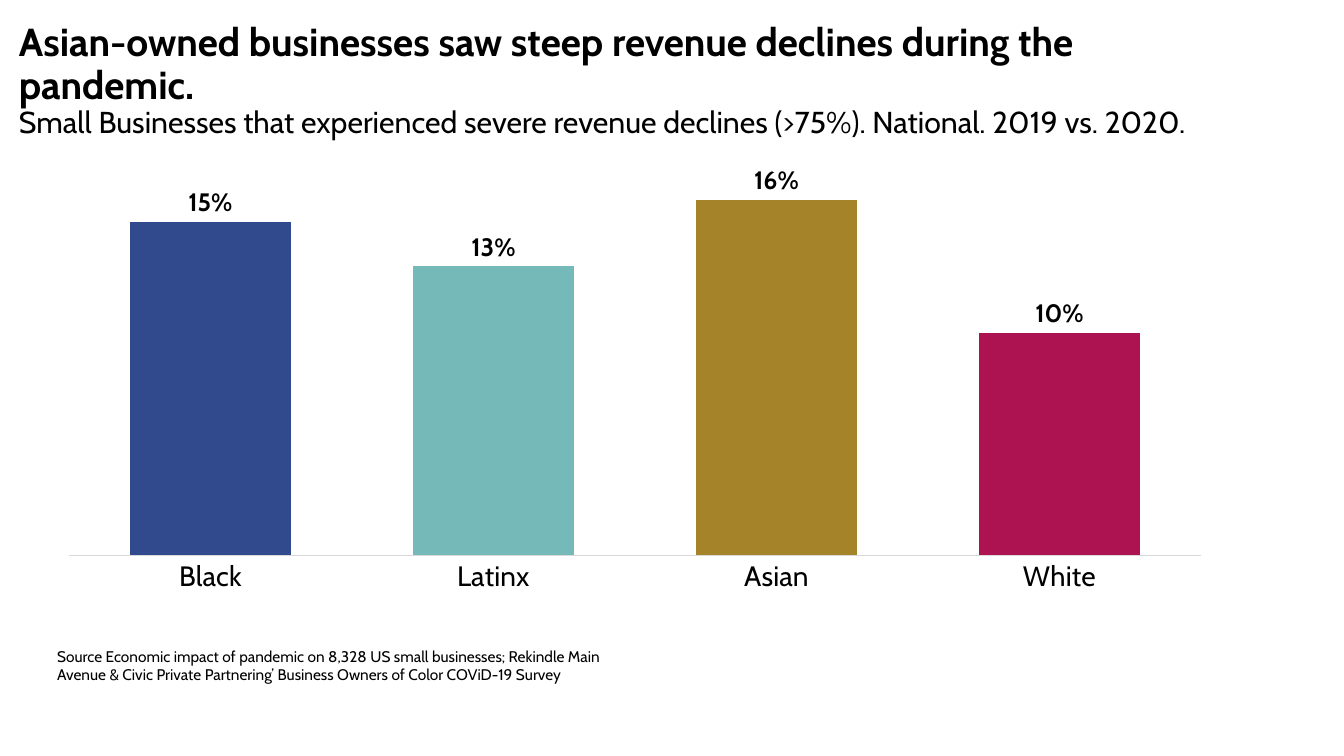
import pptx
import pptx.chart.data
import pptx.dml.color
import pptx.enum.chart
import pptx.enum.text
import pptx.oxml
import pptx.oxml.ns
import pptx.util

Pt = pptx.util.Pt
RGB = pptx.dml.color.RGBColor
FONT = "Cabin"
BLACK = RGB(0x00, 0x00, 0x00)
GRAY = RGB(0xD9, 0xD9, 0xD9)
BLUE = RGB(0x31, 0x4A, 0x8E)
TEAL = RGB(0x75, 0xB9, 0xB9)
GOLD = RGB(0xA5, 0x83, 0x28)
ROSE = RGB(0xAE, 0x13, 0x51)

# Group, share with severe declines, bar colour
GROUPS = [
    ("Black", 0.15, BLUE),
    ("Latinx", 0.13, TEAL),
    ("Asian", 0.16, GOLD),
    ("White", 0.10, ROSE),
]


def style(font, size, bold=False):
    font.name = FONT
    font.size = Pt(size)
    font.bold = bold
    font.color.rgb = BLACK


def add_box(slide, left, top, width, height):
    box = slide.shapes.add_textbox(Pt(left), Pt(top), Pt(width), Pt(height))
    box.text_frame.word_wrap = True
    return box.text_frame


def add_run(para, text, size, bold=False):
    run = para.add_run()
    run.text = text
    style(run.font, size, bold)


def set_plot(chart, **parts):
    """Fix the inner plot area as fractions of the chart."""
    plot = chart.element.find(".//" + pptx.oxml.ns.qn("c:plotArea"))
    for old in plot.findall(pptx.oxml.ns.qn("c:layout")):
        plot.remove(old)
    modes = '<c:xMode val="edge"/><c:yMode val="edge"/>'
    sizes = "".join(f'<c:{key} val="{val}"/>' for key, val in parts.items())
    plot.insert(0, pptx.oxml.parse_xml(
        f'<c:layout {pptx.oxml.ns.nsdecls("c")}><c:manualLayout>'
        f'<c:layoutTarget val="inner"/>{modes}{sizes}'
        '</c:manualLayout></c:layout>'))


def add_bars(slide, left, top, width, height):
    names, shares, colors = zip(*GROUPS)
    data = pptx.chart.data.CategoryChartData(number_format="0%")
    data.categories = names
    data.add_series("Series 1", shares)
    chart = slide.shapes.add_chart(
        pptx.enum.chart.XL_CHART_TYPE.COLUMN_CLUSTERED,
        Pt(left), Pt(top), Pt(width), Pt(height), data).chart
    chart.has_legend = False
    chart.has_title = False
    style(chart.font, 14)
    set_plot(chart, x=0.02, y=0.02, w=0.96, h=0.87)

    # Axes
    axis = chart.category_axis
    axis.major_tick_mark = pptx.enum.chart.XL_TICK_MARK.NONE
    axis.format.line.color.rgb = GRAY
    axis.format.line.width = Pt(0.75)
    style(axis.tick_labels.font, 20)
    scale = chart.value_axis
    scale.minimum_scale = 0
    scale.maximum_scale = 0.18
    scale.has_major_gridlines = False
    scale.visible = False

    # Bars
    plot = chart.plots[0]
    plot.gap_width = 76
    plot.overlap = -27
    plot.vary_by_categories = False
    bars = plot.series[0]
    bars.format.fill.solid()
    bars.format.fill.fore_color.rgb = BLUE
    for index, color in enumerate(colors):
        fill = bars.points[index].format.fill
        fill.solid()
        fill.fore_color.rgb = color

    # Value labels
    labels = bars.data_labels
    labels.show_value = True
    labels.number_format = "0%"
    labels.number_format_is_linked = False
    labels.position = pptx.enum.chart.XL_LABEL_POSITION.OUTSIDE_END
    style(labels.font, 18, True)


def main():
    deck = pptx.Presentation()
    deck.slide_width = Pt(960)
    deck.slide_height = Pt(540)
    slide = deck.slides.add_slide(deck.slide_layouts[6])

    # Heading
    frame = add_box(slide, 6.5, 9.4, 895, 94.3)
    frame.vertical_anchor = pptx.enum.text.MSO_ANCHOR.BOTTOM
    para = frame.paragraphs[0]
    para.line_spacing = 0.9
    para.space_before = Pt(6)
    add_run(para, "Asian-owned businesses saw steep revenue declines "
            "during the pandemic. ", 27.9, True)
    para.add_line_break()
    add_run(para, "Small Businesses that experienced severe revenue declines "
            "(>75%). National. 2019 vs. 2020.", 21.6)

    # Chart
    add_bars(slide, 32.4, 104.4, 842.4, 328.3)

    # Source note
    frame = add_box(slide, 33.8, 458.6, 420.5, 33.8)
    add_run(frame.paragraphs[0],
            "Source Economic impact of pandemic on 8,328 US small businesses; "
            "Rekindle Main Avenue & Civic Private Partnering’ Business Owners "
            "of Color COViD-19 Survey", 11)

    deck.save("out.pptx")


if __name__ == "__main__":
    main()
